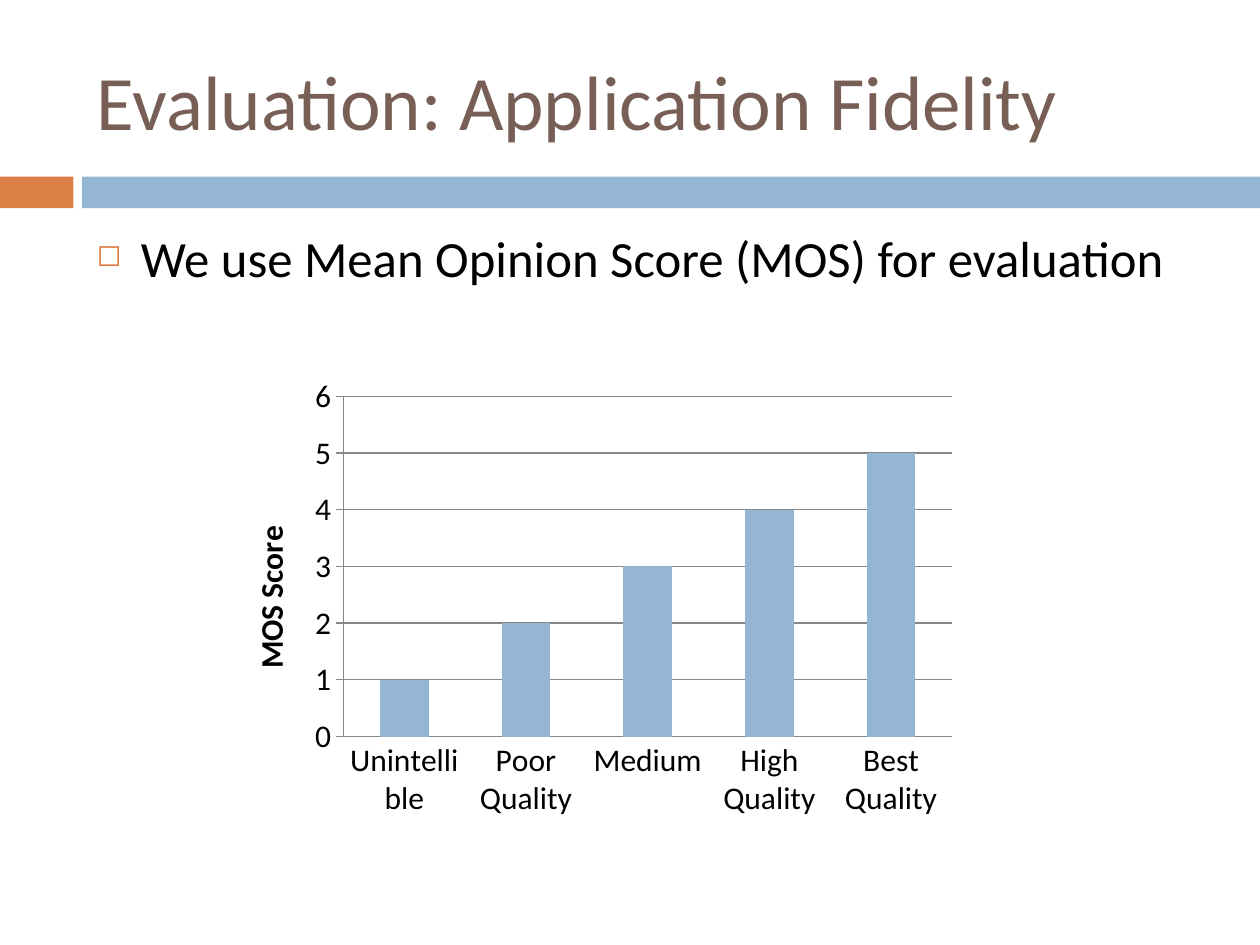
from dataclasses import dataclass

from lxml import etree
from pptx import Presentation
from pptx import util as u
from pptx.chart.data import CategoryChartData
from pptx.dml.color import RGBColor
from pptx.enum import chart as charts, shapes, text
from pptx.oxml import ns

FONT = "Calibri"
BLUE, ORANGE, BROWN = "94B6D2", "DD8047", "775F55"
BLACK, GRAY = "000000", "878787"


@dataclass
class Area:
    left: float
    top: float
    width: float
    height: float

    def lengths(self) -> list:
        return [u.Cm(n) for n in (self.left, self.top, self.width, self.height)]


@dataclass
class Band:
    area: Area
    color: str


@dataclass
class Label:
    area: Area
    words: str
    size: float
    color: str
    anchor: text.MSO_ANCHOR


def rgb(color: str) -> RGBColor:
    return RGBColor.from_string(color)


def style_font(font, size: float, color: str) -> None:
    font.name = FONT
    font.size = u.Pt(size)
    font.color.rgb = rgb(color)


def draw_band(page, band: Band) -> None:
    shape = page.shapes.add_shape(shapes.MSO_SHAPE.RECTANGLE, *band.area.lengths())
    shape.shadow.inherit = False
    shape.fill.solid()
    shape.fill.fore_color.rgb = rgb(band.color)
    shape.line.fill.background()


def draw_label(page, label: Label):
    box = page.shapes.add_textbox(*label.area.lengths())
    frame = box.text_frame
    frame.word_wrap = True
    frame.vertical_anchor = label.anchor
    frame.text = label.words
    para = frame.paragraphs[0]
    for span in para.runs:
        style_font(span.font, label.size, label.color)
    return para


def add_bullet(para, mark: str, color: str, percent: int, indent: float) -> None:
    props = para._p.get_or_add_pPr()
    props.set("marL", str(u.Cm(indent)))
    props.set("indent", str(-u.Cm(indent)))
    tint = etree.SubElement(props, ns.qn("a:buClr"))
    etree.SubElement(tint, ns.qn("a:srgbClr"), val=color)
    etree.SubElement(props, ns.qn("a:buSzPct"), val=str(percent * 1000))
    etree.SubElement(props, ns.qn("a:buChar"), char=mark)


def draw_scores(page, area: Area, scores: dict[str, int]) -> None:
    data = CategoryChartData()
    data.categories = list(scores)
    data.add_series("Series 1", list(scores.values()))
    chart = page.shapes.add_chart(
        charts.XL_CHART_TYPE.COLUMN_CLUSTERED, *area.lengths(), data
    ).chart
    chart.has_legend = False
    chart.has_title = False
    style_font(chart.font, 18, BLACK)

    plot = chart.plots[0]
    plot.gap_width = 150
    plot.vary_by_categories = False
    fill = plot.series[0].format.fill
    fill.solid()
    fill.fore_color.rgb = rgb(BLUE)

    levels, values = chart.category_axis, chart.value_axis
    levels.major_tick_mark = charts.XL_TICK_MARK.NONE
    values.major_tick_mark = charts.XL_TICK_MARK.CROSS
    values.minimum_scale, values.maximum_scale, values.major_unit = 0, 6, 1
    values.has_major_gridlines = True
    for lined in (levels, values, values.major_gridlines):
        lined.format.line.color.rgb = rgb(GRAY)
        lined.format.line.width = u.Pt(0.75)

    title = values.axis_title.text_frame
    title.text = "MOS Score"
    span = title.paragraphs[0].runs[0]
    style_font(span.font, 18, BLACK)
    span.font.bold = True


def main() -> None:
    deck = Presentation()
    deck.slide_width, deck.slide_height = u.Cm(25.4), u.Cm(19.05)
    page = deck.slides.add_slide(deck.slide_layouts[6])

    draw_band(page, Band(Area(0, 3.56, 1.48, 0.64), ORANGE))
    draw_band(page, Band(Area(1.65, 3.56, 23.75, 0.64), BLUE))
    draw_label(page, Label(Area(1.7, 0.64, 22.66, 2.74),
                           "Evaluation: Application Fidelity", 44, BROWN,
                           text.MSO_ANCHOR.MIDDLE))
    point = draw_label(page, Label(Area(1.7, 4.45, 22.66, 12.5),
                                   "We use Mean Opinion Score (MOS) for evaluation",
                                   29, BLACK, text.MSO_ANCHOR.TOP))
    point.space_before = u.Pt(7)
    add_bullet(point, "◻", ORANGE, 60, 0.89)
    draw_scores(page, Area(4.45, 7.42, 15.04, 9.25), {
        "Unintellible": 1,
        "Poor Quality": 2,
        "Medium": 3,
        "High Quality": 4,
        "Best Quality": 5,
    })
    deck.save("out.pptx")


if __name__ == "__main__":
    main()
